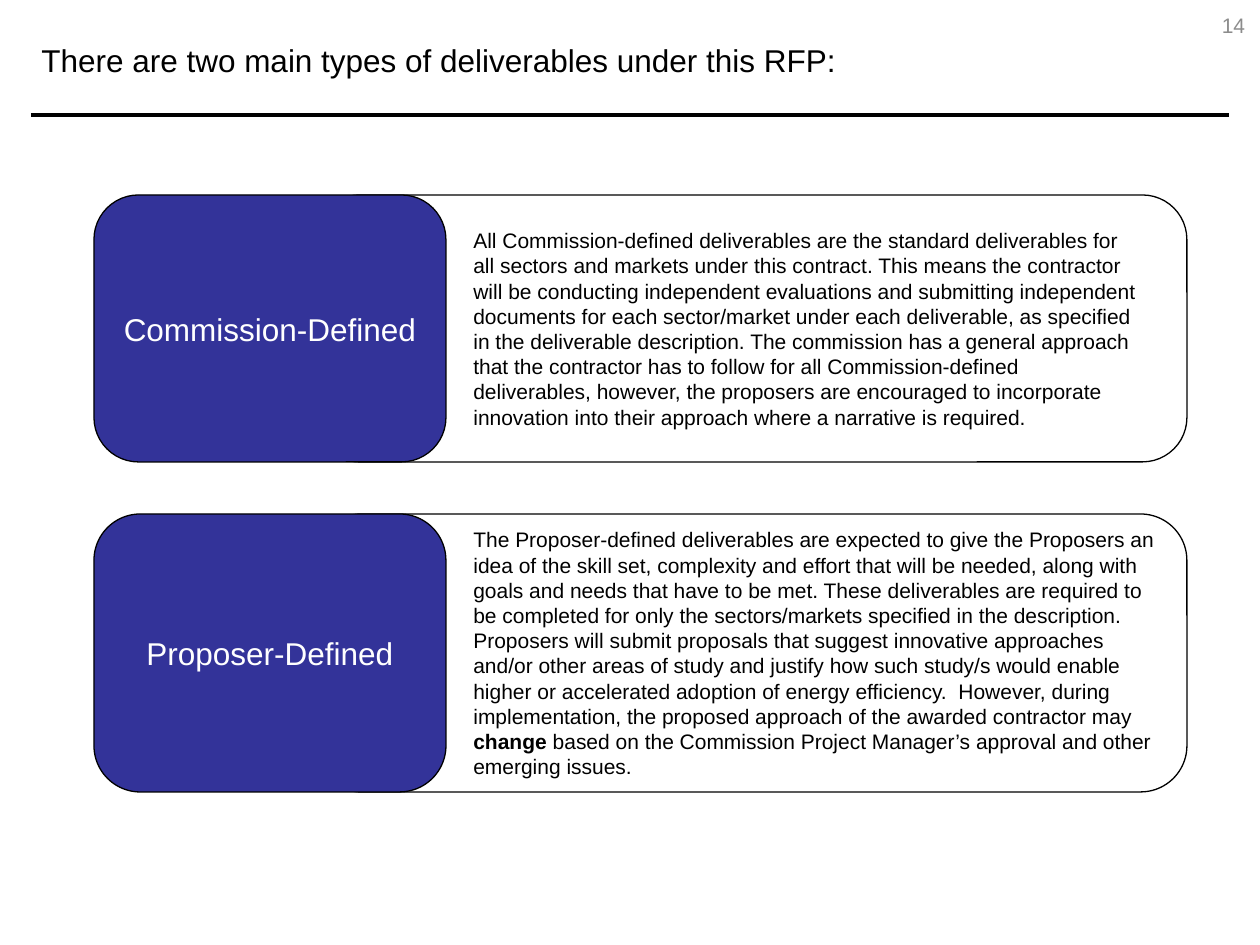
from dataclasses import dataclass

from lxml import etree
from pptx import Presentation
from pptx import util as u
from pptx.dml.color import RGBColor
from pptx.enum import shapes, text
from pptx.oxml import ns

TITLE = "There are two main types of deliverables under this RFP:"
PAGE_NUMBER = "14"

# label, top, height, text width, description as (words, bold) runs
DELIVERABLES = [
    ("Commission-Defined", 195, 267, 694, [
        ("All Commission-defined deliverables are the standard deliverables for "
         "all sectors and markets under this contract. This means the contractor "
         "will be conducting independent evaluations and submitting independent "
         "documents for each sector/market under each deliverable, as specified "
         "in the deliverable description. The commission has a general approach "
         "that the contractor has to follow for all Commission-defined "
         "deliverables, however, the proposers are encouraged to incorporate "
         "innovation into their approach where a narrative is required.", False),
    ]),
    ("Proposer-Defined", 514, 278, 708, [
        ("The Proposer-defined deliverables are expected to give the Proposers an "
         "idea of the skill set, complexity and effort that will be needed, along "
         "with goals and needs that have to be met. These deliverables are required "
         "to be completed for only the sectors/markets specified in the description. "
         "Proposers will submit proposals that suggest innovative approaches "
         "and/or other areas of study and justify how such study/s would enable "
         "higher or accelerated adoption of energy efficiency.  However, during "
         "implementation, the proposed approach of the awarded contractor may ", False),
        ("change ", True),
        ("based on the Commission Project Manager’s approval and other "
         "emerging issues.", False),
    ]),
]


@dataclass(frozen=True)
class Theme:
    font: str = "Arial"
    ink: str = "000000"
    accent: str = "333399"
    on_accent: str = "FFFFFF"
    muted: str = "8C8C8C"
    heading: int = 18
    body: int = 12
    rule: float = 2
    outline: float = 0.75


THEME = Theme()
PX_PER_INCH = 126
LABEL_LEFT, LABEL_WIDTH = 94, 352
FRAME_LEFT, FRAME_WIDTH = 315, 872
TEXT_LEFT = 461


def px(n):
    return u.Emu(round(n * u.Inches(1) / PX_PER_INCH))


def write(s, runs, size, color, align=text.PP_ALIGN.LEFT):
    tf = s.text_frame
    tf.word_wrap = True
    tf.vertical_anchor = text.MSO_ANCHOR.MIDDLE
    p = tf.paragraphs[0]
    p.alignment = align
    for words, bold in runs:
        r = p.add_run()
        r.text = words
        r.font.name = THEME.font
        r.font.size = u.Pt(size)
        r.font.bold = bold
        r.font.color.rgb = RGBColor.from_string(color)


def add_text(slide, box, *style):
    write(slide.shapes.add_textbox(*map(px, box)), *style)


def add_panel(slide, box, fill=None):
    s = slide.shapes.add_shape(shapes.MSO_SHAPE.ROUNDED_RECTANGLE, *map(px, box))
    s.shadow.inherit = False
    s.line.color.rgb = RGBColor.from_string(THEME.ink)
    s.line.width = u.Pt(THEME.outline)
    if fill:
        s.fill.solid()
        s.fill.fore_color.rgb = RGBColor.from_string(fill)
    else:
        s.fill.background()
    return s


def add_rule(slide, left, right, y):
    s = slide.shapes.add_connector(
        shapes.MSO_CONNECTOR.STRAIGHT, px(left), px(y), px(right), px(y))
    s.line.color.rgb = RGBColor.from_string(THEME.ink)
    s.line.width = u.Pt(THEME.rule)
    etree.SubElement(s._element.spPr, ns.qn("a:effectLst"))


def add_deliverable(slide, label, top, height, text_width, description):
    add_panel(slide, (FRAME_LEFT, top, FRAME_WIDTH, height))
    s = add_panel(slide, (LABEL_LEFT, top, LABEL_WIDTH, height), THEME.accent)
    write(s, [(label, False)], THEME.heading, THEME.on_accent, text.PP_ALIGN.CENTER)
    add_text(slide, (TEXT_LEFT, top, text_width, height),
             description, THEME.body, THEME.ink)


def main():
    prs = Presentation()
    prs.slide_width, prs.slide_height = px(1260), px(945)
    slide = prs.slides.add_slide(prs.slide_layouts[6])
    add_rule(slide, 31, 1229, 115)
    add_text(slide, (29, 0, 1191, 119), [(TITLE, False)], THEME.heading, THEME.ink)
    add_text(slide, (1207, 0, 53, 51), [(PAGE_NUMBER, False)],
             THEME.body, THEME.muted, text.PP_ALIGN.CENTER)
    for deliverable in DELIVERABLES:
        add_deliverable(slide, *deliverable)
    prs.save("out.pptx")


if __name__ == "__main__":
    main()
